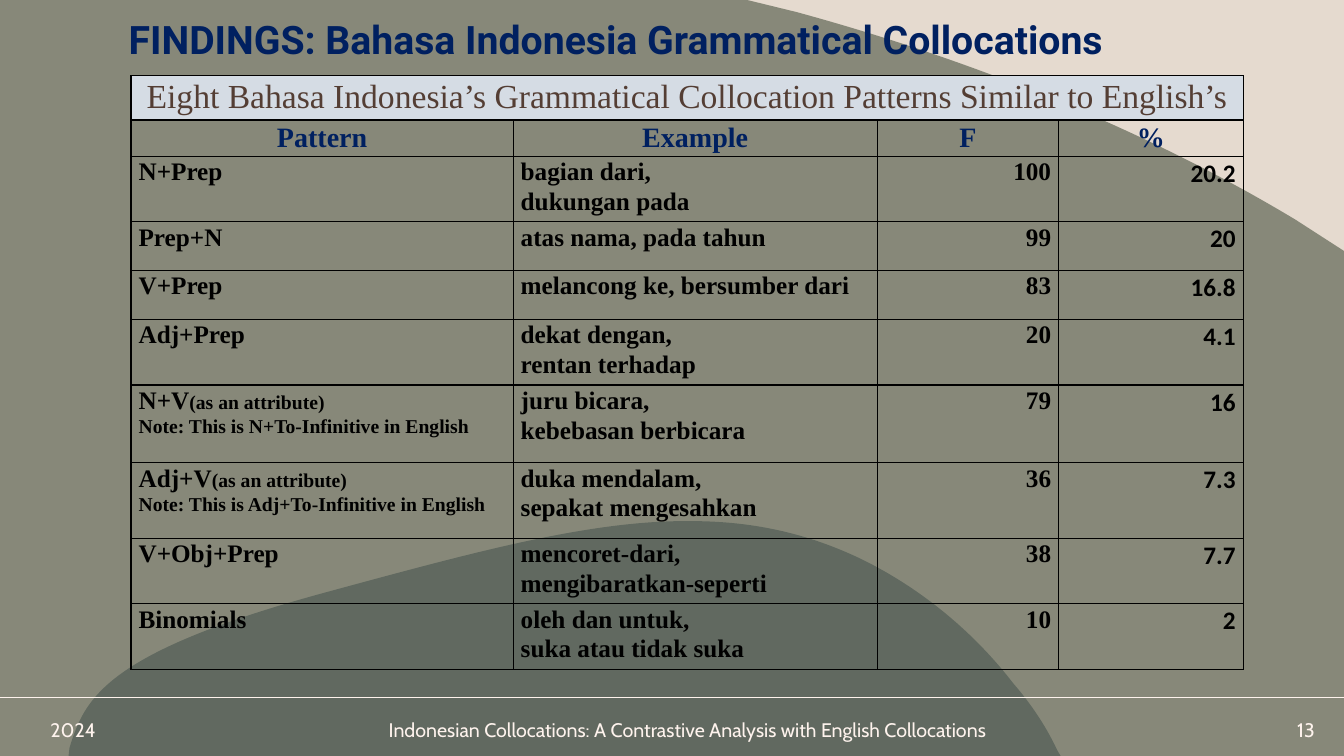
from dataclasses import dataclass

from pptx import Presentation
from pptx.dml.color import RGBColor
from pptx.enum.shapes import MSO_CONNECTOR
from pptx.enum.text import MSO_ANCHOR, PP_ALIGN
from pptx.oxml.ns import qn
from pptx.util import Inches, Pt
from lxml import etree

LEFT, MID, RIGHT, FULL = PP_ALIGN.LEFT, PP_ALIGN.CENTER, PP_ALIGN.RIGHT, PP_ALIGN.JUSTIFY
CENTRE = MSO_ANCHOR.MIDDLE
STRAIGHT = MSO_CONNECTOR.STRAIGHT

SAND = RGBColor(0xE5, 0xDA, 0xCF)
SLATE = RGBColor(0x5D, 0x6A, 0x76)
OLIVE = RGBColor(0x4E, 0x57, 0x45)
CREAM = RGBColor(0xFE, 0xF3, 0xED)
NAVY = RGBColor(0x00, 0x20, 0x60)
BROWN = RGBColor(0x54, 0x3E, 0x34)
PALE = RGBColor(0xD5, 0xDC, 0xE4)
BLACK = RGBColor(0, 0, 0)

SERIF = "Times New Roman"
WIDE, HIGH = 13.33, 7.5

Point = tuple[float, float]


@dataclass
class Hill:
    """An outline: each step has one point for a line or three for a curve."""
    start: Point
    steps: list[tuple[Point, ...]]
    color: RGBColor
    alpha: int


@dataclass
class Foot:
    text: str
    left: float
    width: float
    align: PP_ALIGN


@dataclass
class Entry:
    name: str
    sample: str
    count: str
    share: str
    height: float
    note: str = ""


HILLS = [
    Hill((6.85, 5.17),
         [((7.44, 5.17), (7.99, 5.28), (8.55, 5.55)),
          ((9.3, 5.92), (9.79, 6.44), (10.05, 6.78)),
          ((10.19, 6.94), (10.36, 7.17), (10.49, 7.45)),
          ((10.52, HIGH),), ((0.68, HIGH),), ((0.69, 7.42),),
          ((0.71, 7.35), (0.73, 7.29), (0.76, 7.22)),
          ((0.93, 6.8), (1.35, 6.39), (3.22, 5.88)),
          ((4.73, 5.47), (5.86, 5.16), (6.85, 5.17))],
         SLATE, 73),
    Hill((0, 0),
         [((7.41, 0),), ((7.9, 0.12),),
          ((9.73, 0.62), (11.42, 1.32), (12.85, 2.18)),
          ((WIDE, 2.49),), ((WIDE, HIGH),), ((0, HIGH),)],
         OLIVE, 62),
]

FEET = [
    Foot("2024", 0.4, 1.08, LEFT),
    Foot("Indonesian Collocations: A Contrastive Analysis with English Collocations",
         3.23, 7.18, MID),
    Foot("13", 12.06, 1.08, RIGHT),
]

BANNER = "Eight Bahasa Indonesia’s Grammatical Collocation Patterns Similar to English’s"
HEADS = ["Pattern", "Example", "F", "%"]
COLS = [3.79, 3.61, 1.8, 1.83]
TOPS = [0.44, 0.36]
ENTRIES = [
    Entry("N+Prep", "bagian dari, \ndukungan pada", "100", "20.2", 0.65),
    Entry("Prep+N", "atas nama, pada tahun", "99", "20", 0.48),
    Entry("V+Prep", "melancong ke, bersumber dari", "83", "16.8", 0.49),
    Entry("Adj+Prep", "dekat dengan,\nrentan terhadap", "20", "4.1", 0.65),
    Entry("N+V", "juru bicara,\nkebebasan berbicara", "79", "16", 0.77,
          "(as an attribute) \nNote: This is N+To-Infinitive in English"),
    Entry("Adj+V", "duka mendalam,\nsepakat mengesahkan", "36", "7.3", 0.75,
          "(as an attribute)\nNote: This is Adj+To-Infinitive in English"),
    Entry("V+Obj+Prep", "mencoret-dari,\nmengibaratkan-seperti", "38", "7.7", 0.65),
    Entry("Binomials", "oleh dan untuk,\nsuka atau tidak suka", "10", "2", 0.65),
]


def write(frame, text: str, *, size: float, font: str = SERIF, color: RGBColor = BLACK,
          bold: bool = False, align: PP_ALIGN = LEFT, space: float = 1.0,
          note: str = "") -> None:
    """Fill a frame; each line is a paragraph, a smaller note follows the last."""
    frame.word_wrap = True
    para = frame.paragraphs[0]
    for part, points in ((text, size), (note, 14)):
        for num, line in enumerate(part.split("\n") if part else []):
            if num:
                para = frame.add_paragraph()
            para.alignment, para.line_spacing = align, space
            run = para.add_run()
            run.text = line
            run.font.size, run.font.name, run.font.bold = Pt(points), font, bold
            run.font.color.rgb = color


def draw_hill(slide, hill: Hill) -> None:
    pen = slide.shapes.build_freeform(*map(Inches, hill.start))
    pen.add_line_segments([tuple(map(Inches, step[-1])) for step in hill.steps])
    shape = pen.convert_to_shape()
    shape.shadow.inherit = False
    shape.line.fill.background()
    shape.fill.solid()
    shape.fill.fore_color.rgb = hill.color
    tint = shape.fill._xPr.find(qn("a:solidFill"))[0]
    etree.SubElement(tint, qn("a:alpha"), val=str(hill.alpha * 1000))

    # Bend the lines that have control points
    for node, step in zip(list(shape._element.iter(qn("a:lnTo"))), hill.steps):
        if len(step) == 3:
            bend = etree.Element(qn("a:cubicBezTo"))
            for x, y in step:
                etree.SubElement(bend, qn("a:pt"), x=str(Inches(x) - shape.left),
                                 y=str(Inches(y) - shape.top))
            node.getparent().replace(node, bend)


def draw_rule(slide, top: float) -> None:
    rule = slide.shapes.add_connector(STRAIGHT, 0, Inches(top), Inches(WIDE), Inches(top))
    rule.line.color.rgb, rule.line.width = CREAM, Pt(1.25)
    etree.SubElement(rule._element.spPr, qn("a:effectLst"))


def draw_foot(slide, foot: Foot) -> None:
    box = slide.shapes.add_textbox(Inches(foot.left), Inches(7.07),
                                   Inches(foot.width), Inches(0.34))
    box.text_frame.vertical_anchor = CENTRE
    write(box.text_frame, foot.text, size=14, font="Cabin", color=CREAM, align=foot.align)


def frame_cell(cell) -> None:
    """Clear the fill, set the margins and draw black borders."""
    cell.margin_left = cell.margin_right = Pt(5.4)
    cell.margin_top = cell.margin_bottom = 0
    props = cell._tc.get_or_add_tcPr()
    for side in ("lnL", "lnR", "lnT", "lnB"):
        edge = etree.SubElement(props, qn(f"a:{side}"), w=str(Pt(1)))
        fill = etree.SubElement(edge, qn("a:solidFill"))
        etree.SubElement(fill, qn("a:srgbClr"), val=str(BLACK))
    cell.fill.background()


def draw_table(slide) -> None:
    rows = TOPS + [entry.height for entry in ENTRIES]
    table = slide.shapes.add_table(len(rows), len(COLS), Inches(1.3), Inches(0.75),
                                   Inches(sum(COLS)), Inches(sum(rows))).table
    table.first_row = table.horz_banding = False
    for col, width in zip(table.columns, COLS):
        col.width = Inches(width)
    for row, height in zip(table.rows, rows):
        row.height = Inches(height)
    for cell in table.iter_cells():
        frame_cell(cell)

    # Banner and column heads
    top = table.cell(0, 0)
    top.merge(table.cell(0, len(COLS) - 1))
    top.fill.solid()
    top.fill.fore_color.rgb = PALE
    write(top.text_frame, BANNER, size=24, color=BROWN, align=MID, space=1.07)
    for c, head in enumerate(HEADS):
        write(table.cell(1, c).text_frame, head, size=20, color=NAVY, bold=True,
              align=MID, space=1.07)

    # Patterns
    for r, entry in enumerate(ENTRIES, len(TOPS)):
        parts = [(entry.name, SERIF, FULL, entry.note), (entry.sample, SERIF, FULL, ""),
                 (entry.count, SERIF, RIGHT, ""), (entry.share, "Calibri", RIGHT, "")]
        for c, (text, font, align, note) in enumerate(parts):
            write(table.cell(r, c).text_frame, text, size=18, font=font, bold=True,
                  align=align, space=1.07, note=note)


def main() -> None:
    deck = Presentation()
    deck.slide_width, deck.slide_height = Inches(WIDE), Inches(HIGH)
    slide = deck.slides.add_slide(deck.slide_layouts[5])

    # Backdrop
    slide.background.fill.solid()
    slide.background.fill.fore_color.rgb = SAND
    for hill in HILLS:
        draw_hill(slide, hill)
    draw_rule(slide, 6.92)

    # Title, raised above the backdrop
    title = slide.shapes.title
    slide.shapes._spTree.append(title._element)
    title.left, title.top = Inches(1.08), Inches(0.18)
    title.width, title.height = Inches(11.26), Inches(0.47)
    title.text_frame.vertical_anchor = CENTRE
    write(title.text_frame, " FINDINGS: Bahasa Indonesia Grammatical Collocations",
          size=28, font="Roboto", color=NAVY, bold=True, space=0.9)

    # Footer and table
    for foot in FEET:
        draw_foot(slide, foot)
    draw_table(slide)
    deck.save("out.pptx")


if __name__ == "__main__":
    main()
